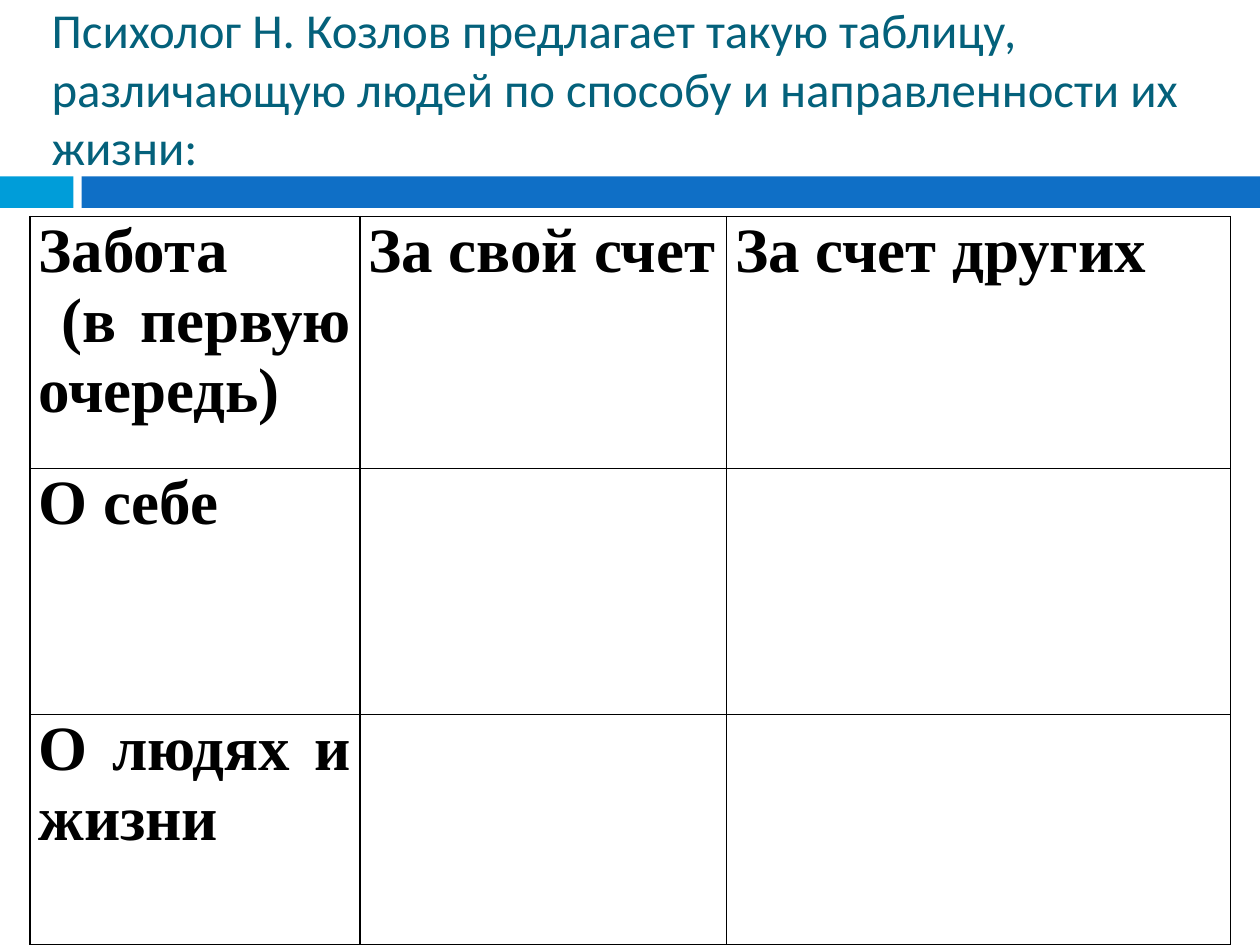
from lxml import etree
from pptx import Presentation
from pptx.dml.color import RGBColor
from pptx.enum.shapes import MSO_SHAPE
from pptx.enum.text import MSO_ANCHOR, MSO_AUTO_SIZE, PP_ALIGN
from pptx.oxml.ns import qn
from pptx.util import Pt

RECTANGLE = MSO_SHAPE.RECTANGLE
TOP = MSO_ANCHOR.TOP
LEFT, JUSTIFY = PP_ALIGN.LEFT, PP_ALIGN.JUSTIFY
NO_AUTOFIT = MSO_AUTO_SIZE.NONE

SLIDE_WIDTH, SLIDE_HEIGHT = 720, 540
HEADING = ("Психолог Н. Козлов предлагает такую таблицу, "
           "различающую людей по способу и направленности их жизни:")
CARE_ROWS = [
    ["Забота\n (в первую очередь)", "За свой счет", "За счет других"],
    ["О себе", "", ""],
    ["О людях и жизни", "", ""],
]
COLUMN_WIDTHS = [188.6, 209.5, 288]
ROW_HEIGHTS = [144, 140.4, 131.8]


def color(hex_code):
    """Return the colour for a hex string."""
    return RGBColor.from_string(hex_code)


def style_font(font, name, size, hex_code, bold=False):
    """Set face, size, colour and weight of a font."""
    font.name, font.size, font.bold = name, Pt(size), bold
    font.color.rgb = color(hex_code)


def add_divider(slide, left, top, width, height):
    """Draw the two-part band, with a short accent and a long bar."""
    accent_width, gap = 42, 4.6
    bar_left = accent_width + gap
    for offset, length, hex_code in [
        (0, accent_width, "009DD9"),
        (bar_left, width - bar_left, "0F6FC6"),
    ]:
        band = slide.shapes.add_shape(
            RECTANGLE, Pt(left + offset), Pt(top), Pt(length), Pt(height))
        band.shadow.inherit = False
        band.fill.solid()
        band.fill.fore_color.rgb = color(hex_code)
        band.line.fill.background()


def place_heading(slide, left, top, width, height):
    """Fill the title placeholder, with its text starting at the top."""
    heading = slide.shapes.title
    heading.left, heading.top = Pt(left), Pt(top)
    heading.width, heading.height = Pt(width), Pt(height)
    frame = heading.text_frame
    frame.text = HEADING
    frame.word_wrap = True
    frame.auto_size = NO_AUTOFIT
    frame.vertical_anchor = TOP
    frame.margin_top = frame.margin_bottom = 0
    paragraph = frame.paragraphs[0]
    paragraph.alignment = LEFT
    style_font(paragraph.font, "Calibri", 27.9, "04617B")


def outline_cell(cell, hex_code, width):
    """Give a cell a solid line on all four sides."""
    properties = cell._tc.get_or_add_tcPr()
    for side in ("a:lnL", "a:lnR", "a:lnT", "a:lnB"):
        line = etree.SubElement(properties, qn(side), w=str(Pt(width)))
        fill = etree.SubElement(line, qn("a:solidFill"))
        etree.SubElement(fill, qn("a:srgbClr"), val=hex_code)


def add_care_table(slide, left, top, width, height):
    """Draw the table of whom people care for and at whose expense."""
    table = slide.shapes.add_table(
        len(ROW_HEIGHTS), len(COLUMN_WIDTHS),
        Pt(left), Pt(top), Pt(width), Pt(height)).table
    table.first_row = table.horz_banding = False
    for column, column_width in zip(table.columns, COLUMN_WIDTHS):
        column.width = Pt(column_width)
    for row, row_height, texts in zip(table.rows, ROW_HEIGHTS, CARE_ROWS):
        row.height = Pt(row_height)
        for cell, text in zip(row.cells, texts):
            outline_cell(cell, "000000", 1)
            cell.fill.background()
            cell.margin_left = cell.margin_right = Pt(5)
            cell.margin_top = cell.margin_bottom = 0
            cell.vertical_anchor = TOP
            cell.text = text
            for paragraph in cell.text_frame.paragraphs:
                paragraph.alignment = JUSTIFY
                style_font(paragraph.font, "Times New Roman", 36, "000000", True)


def main():
    """Build and save the slide."""
    deck = Presentation()
    deck.slide_width, deck.slide_height = Pt(SLIDE_WIDTH), Pt(SLIDE_HEIGHT)
    slide = deck.slides.add_slide(deck.slide_layouts[5])
    add_divider(slide, 0, 100.8, SLIDE_WIDTH, 18)
    place_heading(slide, 22.3, 0, 667.4, 100.8)
    add_care_table(slide, 17, 123.8, sum(COLUMN_WIDTHS), sum(ROW_HEIGHTS))
    deck.save("out.pptx")


if __name__ == "__main__":
    main()
